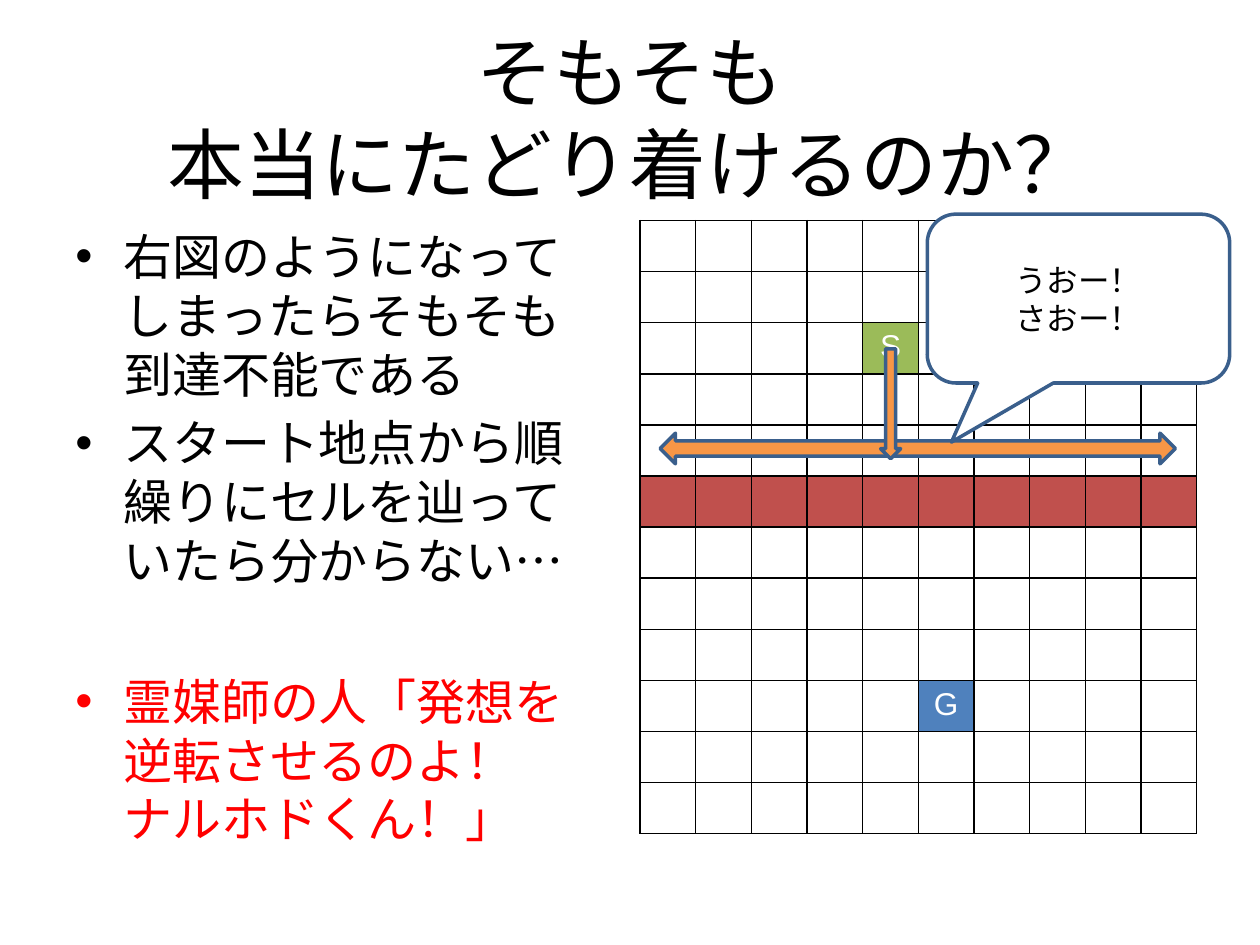
"""Builds the slide on whether the goal can be reached at all."""
from lxml import etree
from pptx import Presentation
from pptx import util as u
from pptx.dml.color import RGBColor
from pptx.enum import shapes, text
from pptx.oxml.ns import qn

COLORS = {"ink": "000000", "paper": "FFFFFF", "alert": "FF0000", "start": "9BBB59",
          "goal": "4F81BD", "wall": "C0504D", "arrow": "F79646", "outline": "3A5F8C"}
JAPANESE, LATIN = "Noto Sans CJK JP", "Arial"
WIDTH, HEIGHT = 10, 7.5
COLUMNS, ROWS = 10, 12
MAZE = (5.08, 1.75, 4.42, 4.87)
WALL_ROW = 5
MARKS = {(2, 4): ("S", "start"), (9, 5): ("G", "goal")}
BULLETS = [("右図のようになってしまったらそもそも到達不能である", "ink", 5.6),
           ("スタート地点から順繰りにセルを辿っていたら分からない…", "ink", 5.6),
           ("霊媒師の人「発想を逆転させるのよ！\vナルホドくん！」", "alert", 47)]


def color(name):
    return RGBColor.from_string(COLORS[name])


def area(left, top, width, height):
    return [u.Inches(value) for value in (left, top, width, height)]


def cell_area(column, row, columns, rows):
    """Turns a place counted in maze cells into inches."""
    left, top, width, height = MAZE
    wide, high = width / COLUMNS, height / ROWS
    return left + column * wide, top + row * high, columns * wide, rows * high


class Slide:
    """Holds the deck, its current page and the shared style."""

    def __init__(self):
        self.deck = Presentation()
        self.deck.slide_width, self.deck.slide_height = u.Inches(WIDTH), u.Inches(HEIGHT)
        self.page = self.deck.slides.add_slide(self.deck.slide_layouts[5])

    def style(self, para, size, ink="ink", font=JAPANESE, align=text.PP_ALIGN.CENTER):
        para.alignment = align
        if font == JAPANESE:
            para.line_spacing = u.Pt(size * 1.2)
        for span in para.runs:
            span.font.size, span.font.name = u.Pt(size), font
            span.font.color.rgb = color(ink)
            if font == JAPANESE:
                etree.SubElement(span.font._element, qn("a:ea"), typeface=font)

    def title(self, words, place):
        box = self.page.shapes.title
        box.left, box.top, box.width, box.height = area(*place)
        frame = box.text_frame
        frame.text = words
        frame.vertical_anchor = text.MSO_ANCHOR.MIDDLE
        frame.auto_size = text.MSO_AUTO_SIZE.NONE
        self.style(frame.paragraphs[0], 44)

    def bullets(self, items, place):
        frame = self.page.shapes.add_textbox(*area(*place)).text_frame
        frame.word_wrap = True
        for index, (words, ink, gap) in enumerate(items):
            para = frame.add_paragraph() if index else frame.paragraphs[0]
            para.text = words
            para.space_before = u.Pt(gap)
            self.style(para, 28, ink, align=text.PP_ALIGN.LEFT)
            props = para._p.get_or_add_pPr()
            props.set("marL", str(u.Inches(0.38)))
            props.set("indent", str(-u.Inches(0.38)))
            etree.SubElement(props, qn("a:buFont"), typeface=LATIN)
            etree.SubElement(props, qn("a:buChar"), char="•")

    def borders(self, cell):
        props = cell._tc.get_or_add_tcPr()
        for side in ("lnL", "lnR", "lnT", "lnB"):
            line = etree.SubElement(props, qn(f"a:{side}"), w=str(u.Pt(1)))
            fill = etree.SubElement(line, qn("a:solidFill"))
            etree.SubElement(fill, qn("a:srgbClr"), val=COLORS["ink"])

    def maze(self):
        table = self.page.shapes.add_table(ROWS, COLUMNS, *area(*MAZE)).table
        table.first_row = table.horz_banding = False
        for row in range(ROWS):
            for column in range(COLUMNS):
                cell = table.cell(row, column)
                self.borders(cell)
                blank = ("", "wall" if row == WALL_ROW else None)
                letter, fill = MARKS.get((row, column), blank)
                if fill:
                    cell.fill.solid()
                    cell.fill.fore_color.rgb = color(fill)
                else:
                    cell.fill.background()
                if letter:
                    cell.text_frame.text = letter
                    self.style(cell.text_frame.paragraphs[0], 18, "paper", LATIN)

    def shape(self, kind, place, fill):
        shape = self.page.shapes.add_shape(kind, *area(*place))
        shape.shadow.inherit = False
        shape.fill.solid()
        shape.fill.fore_color.rgb = color(fill)
        shape.line.color.rgb = color("outline")
        shape.line.width = u.Pt(2)
        return shape

    def callout(self, words, place, tail):
        shape = self.shape(shapes.MSO_SHAPE.ROUNDED_RECTANGULAR_CALLOUT, place, "paper")
        for index, value in enumerate(tail):
            shape.adjustments[index] = value
        frame = shape.text_frame
        frame.text = words
        frame.vertical_anchor = text.MSO_ANCHOR.MIDDLE
        for para in frame.paragraphs:
            self.style(para, 18)


def main():
    slide = Slide()
    margin = WIDTH * 0.05
    slide.title("そもそも\v本当にたどり着けるのか？", (margin, HEIGHT * 0.04, WIDTH * 0.9, 1.25))
    slide.bullets(BULLETS, (margin, MAZE[1], MAZE[2], HEIGHT * 0.66))
    slide.maze()
    slide.shape(shapes.MSO_SHAPE.LEFT_RIGHT_ARROW, cell_area(0.36, 4.16, 9.25, 0.6), "arrow")
    slide.shape(shapes.MSO_SHAPE.DOWN_ARROW, cell_area(4.32, 2.51, 0.36, 2.15), "arrow")
    slide.callout("うおー！\nさおー！", (7.36, 1.7, 2.4, 1.34), (-0.42, 0.85, 0.17))
    slide.deck.save("out.pptx")


if __name__ == "__main__":
    main()
